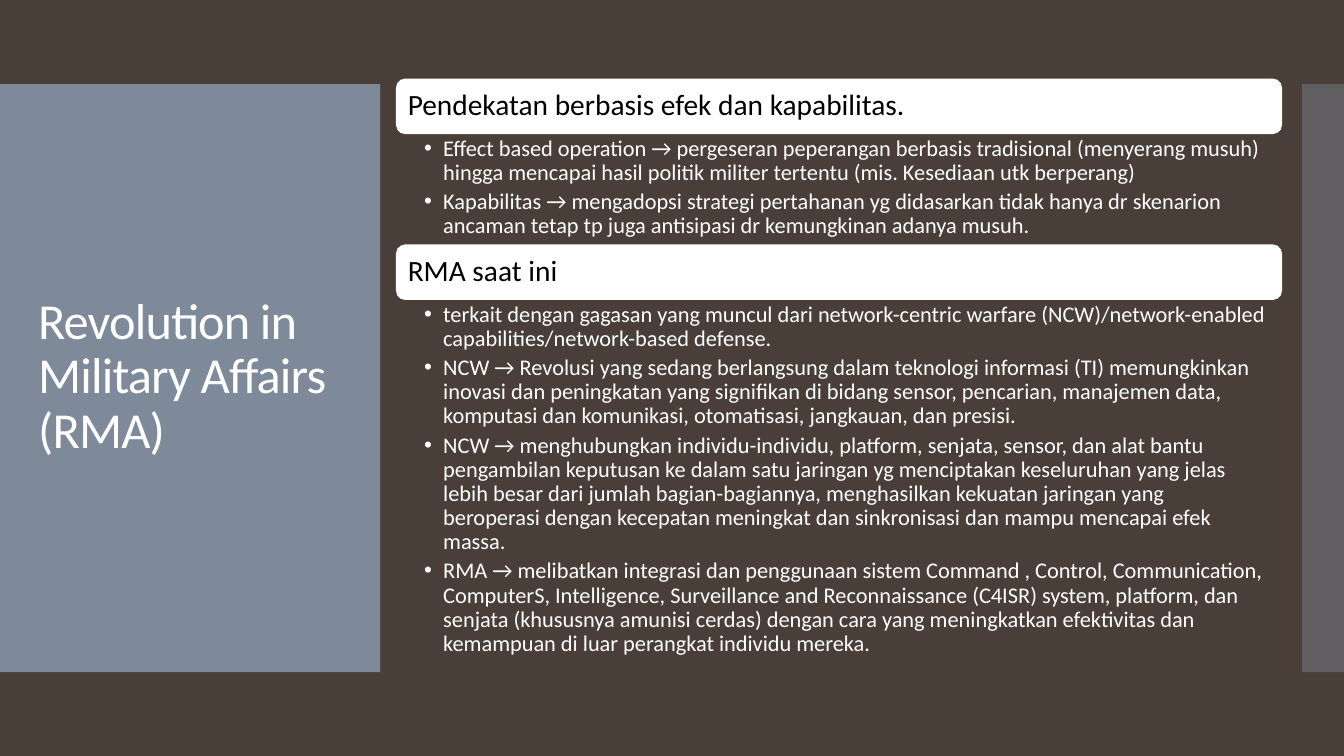
from lxml import etree
from pptx import Presentation
from pptx.dml.color import RGBColor
from pptx.enum import shapes, text
from pptx.oxml import ns
from pptx.util import Cm, Pt

SECTIONS = [
    ("Pendekatan berbasis efek dan kapabilitas.", 2.78, [
        "Effect based operation → pergeseran peperangan berbasis tradisional (menyerang musuh) "
        "hingga mencapai hasil politik militer tertentu (mis. Kesediaan utk berperang)",
        "Kapabilitas → mengadopsi strategi pertahanan yg didasarkan tidak hanya dr skenarion "
        "ancaman tetap tp juga antisipasi dr kemungkinan adanya musuh.",
    ]),
    ("RMA saat ini", 9.42, [
        "terkait dengan gagasan yang muncul dari network-centric warfare (NCW)/network-enabled "
        "capabilities/network-based defense.",
        "NCW → Revolusi yang sedang berlangsung dalam teknologi informasi (TI) memungkinkan "
        "inovasi dan peningkatan yang signifikan di bidang sensor, pencarian, manajemen data, "
        "komputasi dan komunikasi, otomatisasi, jangkauan, dan presisi.",
        "NCW → menghubungkan individu-individu, platform, senjata, sensor, dan alat bantu "
        "pengambilan keputusan ke dalam satu jaringan yg menciptakan keseluruhan yang jelas "
        "lebih besar dari jumlah bagian-bagiannya, menghasilkan kekuatan jaringan yang "
        "beroperasi dengan kecepatan meningkat dan sinkronisasi dan mampu mencapai efek massa.",
        "RMA → melibatkan integrasi dan penggunaan sistem Command , Control, Communication, "
        "ComputerS, Intelligence, Surveillance and Reconnaissance (C4ISR) system, platform, dan "
        "senjata (khususnya amunisi cerdas) dengan cara yang meningkatkan efektivitas dan "
        "kemampuan di luar perangkat individu mereka.",
    ]),
]
CONTENT_LEFT, CONTENT_WIDTH = 9.98, 22.33
CONTENT_TOP, HEADING_HEIGHT = 1.98, 1.4
PANEL_TOP, PANEL_HEIGHT = 2.12, 14.82


def rgb(value):
    return RGBColor.from_string(value)


def write(para, content, size=16, color="FFFFFF", font="Calibri", after=0, tracking=None):
    """Fill a paragraph with one formatted, left-aligned run."""
    para.alignment = text.PP_ALIGN.LEFT
    para.line_spacing = 0.9
    para.space_before = Pt(0)
    para.space_after = Pt(after)
    span = para.add_run()
    span.text = content
    span.font.name = font
    span.font.size = Pt(size)
    span.font.color.rgb = rgb(color)
    if tracking is not None:
        span.font._element.set("spc", str(round(tracking * 100)))


def add_bullet(para, indent):
    properties = para._p.get_or_add_pPr()
    properties.set("marL", str(Cm(indent)))
    properties.set("indent", str(-Cm(indent)))
    etree.SubElement(properties, ns.qn("a:buFont"), typeface="Arial")
    etree.SubElement(properties, ns.qn("a:buChar"), char="•")


class Page:
    background = "4A3F38"
    panel_color = "818E9F"
    card_color = "FFFFFF"
    card_text = "000000"

    def __init__(self, deck):
        self.slide = deck.slides.add_slide(deck.slide_layouts.get_by_name("Two Content"))
        fill = self.slide.background.fill
        fill.solid()
        fill.fore_color.rgb = rgb(self.background)

    def shape(self, kind, left, top, width, height, color):
        box = self.slide.shapes.add_shape(kind, Cm(left), Cm(top), Cm(width), Cm(height))
        box.shadow.inherit = False
        box.fill.solid()
        box.fill.fore_color.rgb = rgb(color)
        box.line.fill.background()
        return box

    def panel(self, left, width, opacity):
        """Add a translucent side panel behind the placeholders."""
        box = self.shape(shapes.MSO_SHAPE.RECTANGLE, left, PANEL_TOP, width,
                         PANEL_HEIGHT, self.panel_color)
        color = box._element.spPr.find(".//" + ns.qn("a:srgbClr"))
        etree.SubElement(color, ns.qn("a:alpha"), val=str(opacity * 1000))
        self.slide.shapes._spTree.insert(2, box._element)

    def frame(self, box, insets, anchor):
        frame = box.text_frame
        frame.word_wrap = True
        frame.auto_size = text.MSO_AUTO_SIZE.NONE
        frame.vertical_anchor = anchor
        left, top, right, bottom = map(Cm, insets)
        frame.margin_left, frame.margin_top = left, top
        frame.margin_right, frame.margin_bottom = right, bottom
        return frame

    def place(self, box, left, top, width, height):
        box.left, box.top, box.width, box.height = map(Cm, (left, top, width, height))

    def title(self, content):
        box = self.slide.shapes.title
        self.place(box, 0.71, 3.12, 8.18, 12.78)
        frame = self.frame(box, (0.25, 0.13, 0.25, 0.13), text.MSO_ANCHOR.MIDDLE)
        write(frame.paragraphs[0], content, size=36, tracking=-0.6)

    def heading(self, content, top):
        box = self.shape(shapes.MSO_SHAPE.ROUNDED_RECTANGLE, CONTENT_LEFT, top,
                         CONTENT_WIDTH, HEADING_HEIGHT, self.card_color)
        frame = self.frame(box, (0.23, 0.23, 0.23, 0.23), text.MSO_ANCHOR.MIDDLE)
        write(frame.paragraphs[0], content, size=21, color=self.card_text)

    def bullets(self, index, items, top, height):
        box = self.slide.placeholders[index]
        self.place(box, CONTENT_LEFT, top, CONTENT_WIDTH, height)
        frame = self.frame(box, (0.71, 0.07, 0.4, 0.07), text.MSO_ANCHOR.TOP)
        for number, item in enumerate(items):
            para = frame.add_paragraph() if number else frame.paragraphs[0]
            write(para, item, after=3.6)
            add_bullet(para, 0.48)


def main():
    deck = Presentation()
    deck.slide_width, deck.slide_height = Cm(33.87), Cm(19.05)
    page = Page(deck)
    page.panel(0, 9.58, opacity=95)
    page.panel(32.81, 1.06, opacity=40)
    page.title("Revolution in Military Affairs (RMA)")
    top = CONTENT_TOP
    for index, (heading, height, items) in enumerate(SECTIONS, start=1):
        page.heading(heading, top)
        page.bullets(index, items, top + HEADING_HEIGHT, height)
        top += HEADING_HEIGHT + height
    deck.save("out.pptx")


if __name__ == "__main__":
    main()
